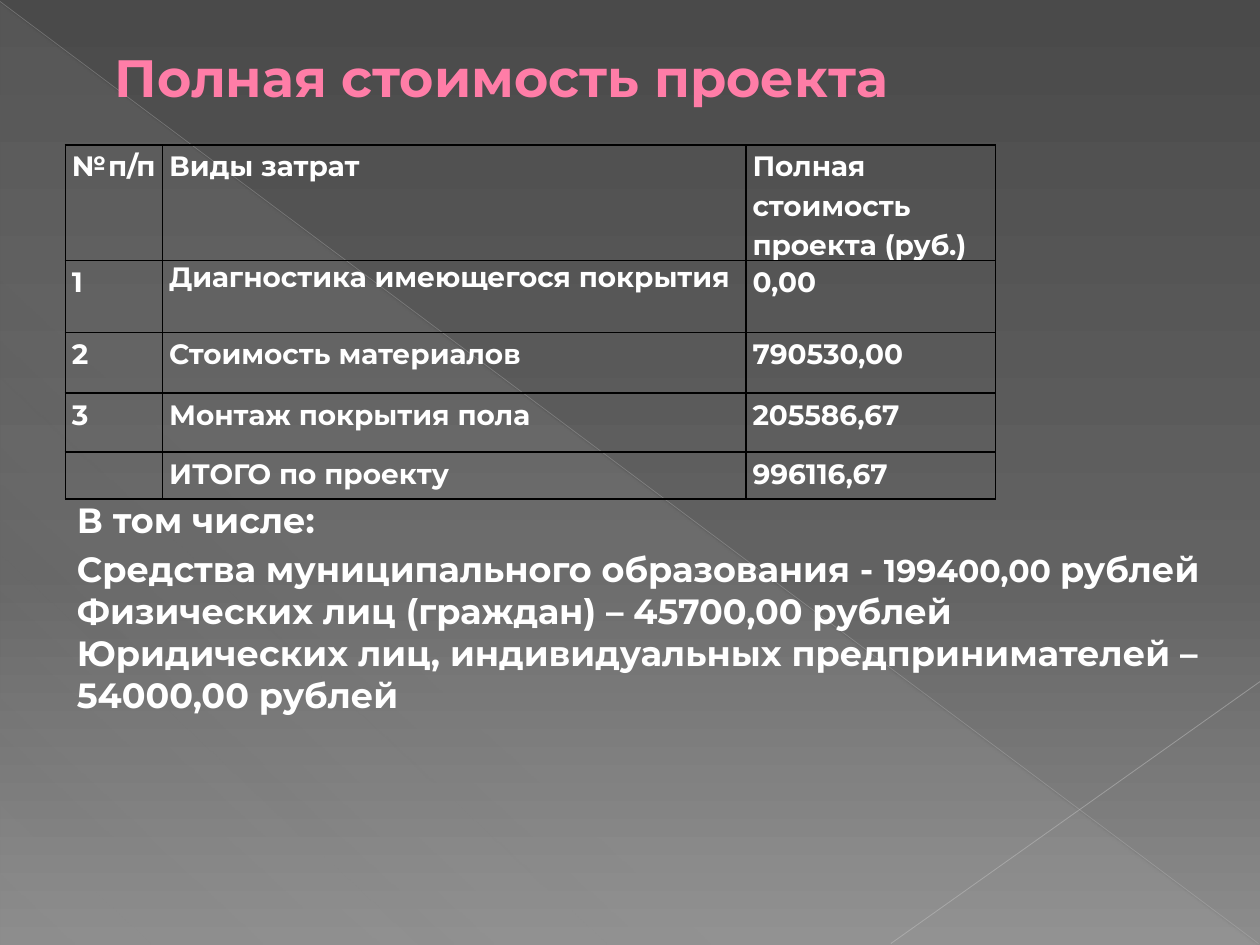
from dataclasses import dataclass

from lxml import etree
from pptx import Presentation
from pptx.dml.color import RGBColor
from pptx.enum import shapes, text
from pptx.oxml import ns
from pptx.util import Cm, Pt


@dataclass(frozen=True)
class Theme:
    font: str = "Montserrat"
    title: str = "FF7DA7"
    title_outline: str = "B12761"
    body: str = "FFFFFF"
    border: str = "000000"
    glass: str = "D2D2D2"
    diagonal: str = "BFBFBF"
    corner: str = "C6C6C6"
    title_size: int = 30
    body_size: int = 20
    amount_size: int = 18
    table_size: int = 16


THEME = Theme()

COST_ROWS = [
    ("№п/п", "Виды затрат", "Полная стоимость проекта (руб.)"),
    ("1", "Диагностика имеющегося покрытия", "0,00"),
    ("2", "Стоимость материалов", "790530,00"),
    ("3", "Монтаж покрытия пола", "205586,67"),
    ("", "ИТОГО по проекту", "996116,67"),
]
COLUMN_WIDTHS = (1.96, 11.76, 5.03)
ROW_HEIGHTS = (1.6, 1.45, 1.22, 1.19, 0.94)

# Each paragraph: line spacing and its runs
FUNDING = [
    (None, [("В том числе:", THEME.body_size)]),
    (1.15, [("Средства муниципального образования - ", THEME.body_size),
            ("199400,00 ", THEME.amount_size),
            ("рублей", THEME.body_size)]),
    (None, [("Физических лиц (граждан) – 45700,00 рублей", THEME.body_size)]),
    (None, [("Юридических лиц, индивидуальных предпринимателей – "
             "54000,00 рублей", THEME.body_size)]),
]


def add_element(parent, tag, **attributes):
    element = etree.SubElement(parent, ns.qn(tag))
    for name, value in attributes.items():
        element.set(name, str(value))
    return element


def add_alpha(color, percent):
    add_element(color, "a:alpha", val=percent * 1000)


def add_solid_line(parent, tag, color, points):
    line = add_element(parent, tag, w=Pt(points))
    fill = add_element(line, "a:solidFill")
    add_element(fill, "a:srgbClr", val=color)
    return line


def set_gradient(fill, owner, stops, angle):
    """Stops are (position %, colour, opacity %)."""
    fill.gradient()
    gradient = owner.find(".//" + ns.qn("a:gradFill"))
    for child in list(gradient):
        gradient.remove(child)
    stop_list = add_element(gradient, "a:gsLst")
    for position, color, opacity in stops:
        stop = add_element(stop_list, "a:gs", pos=position * 1000)
        node = add_element(stop, "a:srgbClr", val=color)
        if opacity < 100:
            add_alpha(node, opacity)
    add_element(gradient, "a:lin", ang=angle * 60000, scaled=0)


def add_run(paragraph, wording, size, color):
    run = paragraph.add_run()
    run.text = wording
    run.font.name = THEME.font
    run.font.size = Pt(size)
    run.font.bold = True
    run.font.color.rgb = RGBColor.from_string(color)
    return run


def add_thin_line(slide, start, end, color, points, opacity):
    line = slide.shapes.add_connector(
        shapes.MSO_CONNECTOR.STRAIGHT, *map(Cm, start + end))
    line.line.width = Pt(points)
    line.line.color.rgb = RGBColor.from_string(color)
    add_alpha(line._element.find(".//" + ns.qn("a:srgbClr")), opacity)
    add_element(line._element.spPr, "a:effectLst")


def add_backdrop(slide, left, top, width, height):
    set_gradient(slide.background.fill, slide._element,
                 [(0, "4A4A4A", 100), (60, "626262", 100),
                  (100, "8C8C8C", 100)], 90)
    # Translucent half below the diagonal
    triangle = slide.shapes.add_shape(
        shapes.MSO_SHAPE.RIGHT_TRIANGLE,
        Cm(left), Cm(top + 0.05), Cm(width - 0.05), Cm(height - 0.05))
    triangle.shadow.inherit = False
    triangle.line.fill.background()
    set_gradient(triangle.fill, triangle._element,
                 [(0, THEME.glass, 10), (70, THEME.glass, 8),
                  (100, THEME.glass, 1)], 133)
    # Diagonal and corner lines
    right, bottom = left + width, top + height - 0.03
    add_thin_line(slide, (left, top + 0.03), (right - 0.03, bottom),
                  THEME.diagonal, 0.39, 35)
    add_thin_line(slide, (right, top + 13.74), (right - 7.44, bottom),
                  THEME.corner, 0.47, 45)


def add_title(slide, left, top, width, height):
    box = slide.shapes.add_textbox(Cm(left), Cm(top), Cm(width), Cm(height))
    frame = box.text_frame
    frame.word_wrap = True
    frame.vertical_anchor = text.MSO_ANCHOR.MIDDLE
    paragraph = frame.paragraphs[0]
    paragraph._p.get_or_add_pPr().set("marL", str(Cm(1.35)))
    run = add_run(paragraph, "Полная стоимость проекта",
                  THEME.title_size, THEME.title)
    properties = run.font._element
    outline = add_solid_line(properties, "a:ln", THEME.title_outline, 0.5)
    properties.insert(0, outline)


def style_cell(cell):
    cell.margin_left = cell.margin_right = Cm(0.13)
    cell.margin_top = cell.margin_bottom = 0
    properties = cell._tc.get_or_add_tcPr()
    for side in ("a:lnL", "a:lnR", "a:lnT", "a:lnB"):
        add_solid_line(properties, side, THEME.border, 1)
    cell.fill.background()


def add_cost_table(slide, left, top):
    table = slide.shapes.add_table(
        len(ROW_HEIGHTS), len(COLUMN_WIDTHS), Cm(left), Cm(top),
        Cm(sum(COLUMN_WIDTHS)), Cm(sum(ROW_HEIGHTS))).table
    table.first_row = table.horz_banding = False
    for column, width in zip(table.columns, COLUMN_WIDTHS):
        column.width = Cm(width)
    for row, height, wordings in zip(table.rows, ROW_HEIGHTS, COST_ROWS):
        row.height = Cm(height)
        for cell, wording in zip(row.cells, wordings):
            style_cell(cell)
            if not wording:
                continue
            paragraph = cell.text_frame.paragraphs[0]
            if wording != COST_ROWS[1][1]:
                paragraph.line_spacing = 1.15
            add_run(paragraph, wording, THEME.table_size, THEME.body)


def add_funding(slide, left, top, width, height):
    box = slide.shapes.add_textbox(Cm(left), Cm(top), Cm(width), Cm(height))
    frame = box.text_frame
    frame.word_wrap = True
    frame.auto_size = text.MSO_AUTO_SIZE.SHAPE_TO_FIT_TEXT
    for index, (spacing, runs) in enumerate(FUNDING):
        paragraph = frame.add_paragraph() if index else frame.paragraphs[0]
        if spacing:
            paragraph.line_spacing = spacing
        for wording, size in runs:
            add_run(paragraph, wording, size, THEME.body)


def main():
    presentation = Presentation()
    presentation.slide_width = Cm(25.4)
    presentation.slide_height = Cm(19.05)
    slide = presentation.slides.add_slide(presentation.slide_layouts[6])
    add_backdrop(slide, 0, 0, 25.4, 19.05)
    add_title(slide, 0.71, 0.53, 23.39, 2.01)
    add_cost_table(slide, 1.32, 2.92)
    add_funding(slide, 1.3, 9.93, 23.6, 6.2)
    presentation.save("out.pptx")


if __name__ == "__main__":
    main()
